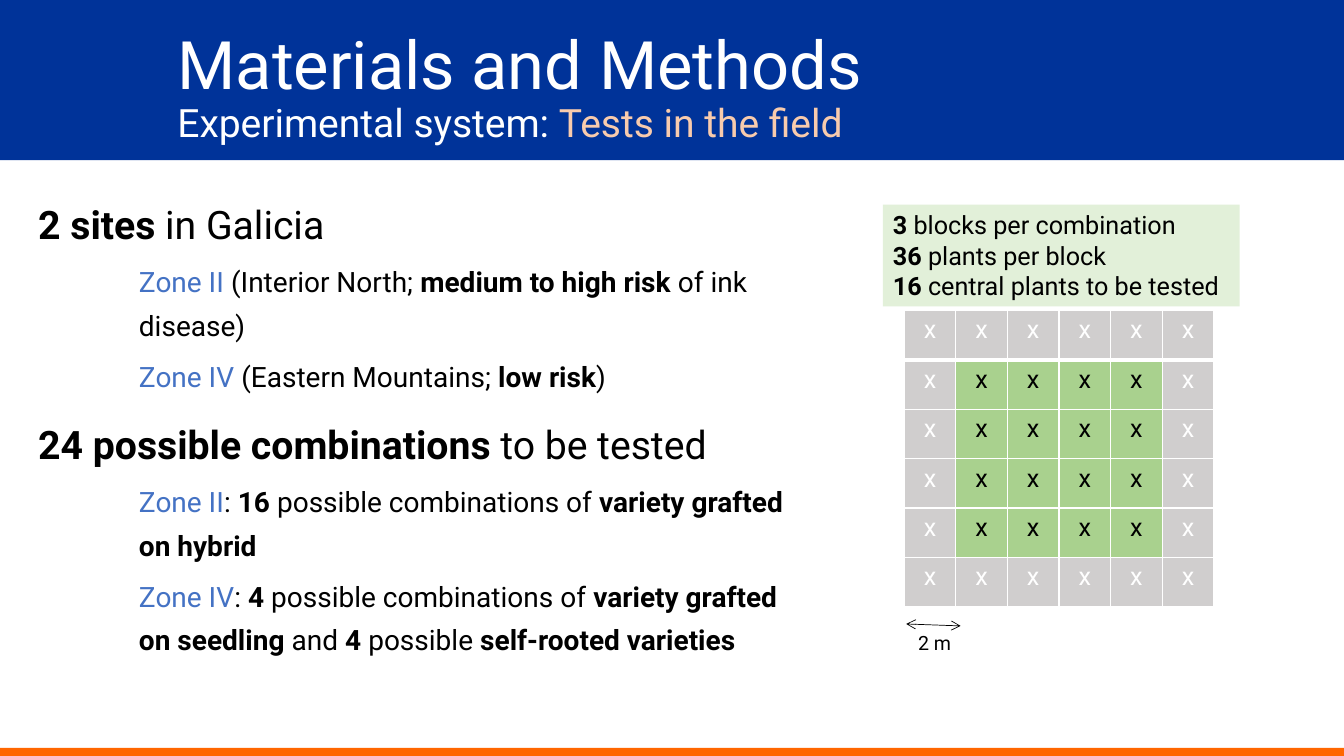
from dataclasses import dataclass
from itertools import product

from lxml.etree import SubElement
from pptx import Presentation
from pptx.dml.color import RGBColor
from pptx.enum.shapes import MSO_CONNECTOR as Connector, MSO_SHAPE as Preset
from pptx.enum.text import MSO_ANCHOR as Anchor, MSO_AUTO_SIZE as AutoSize, PP_ALIGN as Align
from pptx.oxml.ns import qn
from pptx.util import Pt

COLORS = {
    "black": "000000", "white": "FFFFFF", "navy": "003399", "orange": "FF6600",
    "peach": "F8CBAD", "blue": "4472C4", "mint": "E2F0D9", "green": "A9D18E", "gray": "D0CECE",
}
GRID_SIZE = 6
CELL_WIDTH, CELL_HEIGHT = 36.86, 35.28


@dataclass
class Span:
    """A stretch of text in one style."""
    text: str
    bold: bool = False
    color: str = "black"


@dataclass
class Line:
    """A paragraph with its size and spacing."""
    spans: list[Span]
    size: float
    before: float = 0
    indent: float = 0
    spacing: float = 1.0


@dataclass
class Box:
    """A rectangle in points with an optional fill and text."""
    left: float
    top: float
    width: float
    height: float
    fill: str = ""
    lines: tuple[Line, ...] = ()


def heading(bold: str, plain: str, before: float = 0) -> Line:
    """Describe a large body line."""
    return Line([Span(bold, True), Span(plain)], 28, before, 0, 1.3)


def detail(zone: str, *spans: Span) -> Line:
    """Describe an indented body line that opens with a zone name."""
    return Line([Span(zone, color="blue"), *spans], 20, 5, 72, 1.3)


def fact(count: str, text: str) -> Line:
    """Describe a line of the block summary."""
    return Line([Span(count, True), Span(text)], 18)


BANDS = (Box(0, 0, 960, 114.5, "navy"), Box(0, 534.25, 960, 5.75, "orange"))
BODY = Box(20.2, 129.6, 558.7, 342, lines=(
    heading("2 sites ", "in Galicia"),
    detail("Zone II ", Span("(Interior North; "), Span("medium to high risk ", True),
           Span("of ink disease)")),
    detail("Zone IV ", Span("(Eastern Mountains; "), Span("low risk", True), Span(")")),
    heading("24 possible combinations ", "to be tested", 10),
    detail("Zone II", Span(": "), Span("16 ", True), Span("possible combinations of "),
           Span("variety grafted on hybrid", True)),
    detail("Zone IV", Span(": "), Span("4", True), Span(" possible combinations of "),
           Span("variety grafted on seedling", True), Span(" and "), Span("4", True),
           Span(" possible "), Span("self-rooted varieties", True)),
))
SCALE_LABEL = Box(648.7, 447.1, 53.3, 24.5, lines=(Line([Span("2 m")], 14),))
SUMMARY = Box(630.7, 146.2, 254.9, 72.7, "mint", (
    fact("3", " blocks per combination"),
    fact("36", " plants per block"),
    fact("16", " central plants to be tested"),
))


def rgb(name: str) -> RGBColor:
    """Look up a colour."""
    return RGBColor.from_string(COLORS[name])


def add_span(paragraph, span: Span, size: float) -> None:
    """Add one formatted run."""
    run = paragraph.add_run()
    run.text = span.text
    run.font.name = "Roboto"
    run.font.size = Pt(size)
    run.font.bold = span.bold
    run.font.color.rgb = rgb(span.color)


def draw_box(slide, box: Box) -> None:
    """Draw a filled rectangle or a plain text box."""
    place = [Pt(value) for value in (box.left, box.top, box.width, box.height)]
    if box.fill:
        shape = slide.shapes.add_shape(Preset.RECTANGLE, *place)
        shape.shadow.inherit = False
        shape.fill.solid()
        shape.fill.fore_color.rgb = rgb(box.fill)
        shape.line.fill.background()
    else:
        shape = slide.shapes.add_textbox(*place)
    frame = shape.text_frame
    frame.word_wrap = True
    frame.vertical_anchor = Anchor.TOP
    for index, line in enumerate(box.lines):
        paragraph = frame.add_paragraph() if index else frame.paragraphs[0]
        paragraph.alignment = Align.LEFT
        paragraph.line_spacing = line.spacing
        paragraph.space_before = Pt(line.before)
        if line.indent:
            paragraph._p.get_or_add_pPr().set("marL", str(Pt(line.indent)))
        for span in line.spans:
            add_span(paragraph, span, line.size)


def format_title(slide) -> None:
    """Place and fill the title above the header band."""
    title = slide.shapes.title
    title.left, title.top, title.width, title.height = Pt(119.5), Pt(28.1), Pt(679.7), Pt(70.6)
    title.element.getparent().append(title.element)
    frame = title.text_frame
    frame.word_wrap = True
    frame.auto_size = AutoSize.NONE
    frame.vertical_anchor = Anchor.MIDDLE
    paragraph = frame.paragraphs[0]
    paragraph.alignment = Align.LEFT
    paragraph.line_spacing = 0.9
    add_span(paragraph, Span("Materials and Methods", color="white"), 47.7)
    paragraph.add_line_break()
    add_span(paragraph, Span("Experimental system: ", color="white"), 27.9)
    add_span(paragraph, Span("Tests in the field", color="peach"), 27.9)


def add_border(cell, side: str, width: float) -> None:
    """Give one side of a cell a white border."""
    border = SubElement(cell._tc.get_or_add_tcPr(), qn(f"a:{side}"), w=str(Pt(width)))
    fill = SubElement(border, qn("a:solidFill"))
    SubElement(fill, qn("a:srgbClr"), val=COLORS["white"])


def draw_plot(slide) -> None:
    """Draw the planting grid with its tested centre."""
    table = slide.shapes.add_table(
        GRID_SIZE, GRID_SIZE, Pt(645.9), Pt(221.8),
        Pt(GRID_SIZE * CELL_WIDTH), Pt(GRID_SIZE * CELL_HEIGHT)).table
    table.first_row = table.horz_banding = False
    for index in range(GRID_SIZE):
        table.columns[index].width = Pt(CELL_WIDTH)
        table.rows[index].height = Pt(CELL_HEIGHT)
    inner = range(1, GRID_SIZE - 1)
    for row, column in product(range(GRID_SIZE), repeat=2):
        cell = table.cell(row, column)
        tested = row in inner and column in inner
        for side in ("lnL", "lnR", "lnT", "lnB"):
            add_border(cell, side, 3 if (row, side) in ((0, "lnB"), (1, "lnT")) else 1)
        cell.fill.solid()
        cell.fill.fore_color.rgb = rgb("green" if tested else "gray")
        paragraph = cell.text_frame.paragraphs[0]
        paragraph.alignment = Align.CENTER
        add_span(paragraph, Span("x", color="black" if tested else "white"), 18)


def draw_scale(slide) -> None:
    """Draw the double arrow that shows the plant spacing."""
    arrow = slide.shapes.add_connector(
        Connector.STRAIGHT, Pt(647.3), Pt(445.7), Pt(686.2), Pt(447.1))
    arrow.line.color.rgb = rgb("black")
    arrow.line.width = Pt(0.5)
    for end in ("headEnd", "tailEnd"):
        SubElement(arrow.line._get_or_add_ln(), qn(f"a:{end}"), type="arrow")
    SubElement(arrow.element.spPr, qn("a:effectLst"))


def main() -> None:
    """Build and save the slide."""
    presentation = Presentation()
    presentation.slide_width, presentation.slide_height = Pt(960), Pt(540)
    slide = presentation.slides.add_slide(presentation.slide_layouts[5])
    for band in BANDS:
        draw_box(slide, band)
    draw_box(slide, BODY)
    format_title(slide)
    draw_plot(slide)
    draw_scale(slide)
    draw_box(slide, SCALE_LABEL)
    draw_box(slide, SUMMARY)
    presentation.save("out.pptx")


if __name__ == "__main__":
    main()
